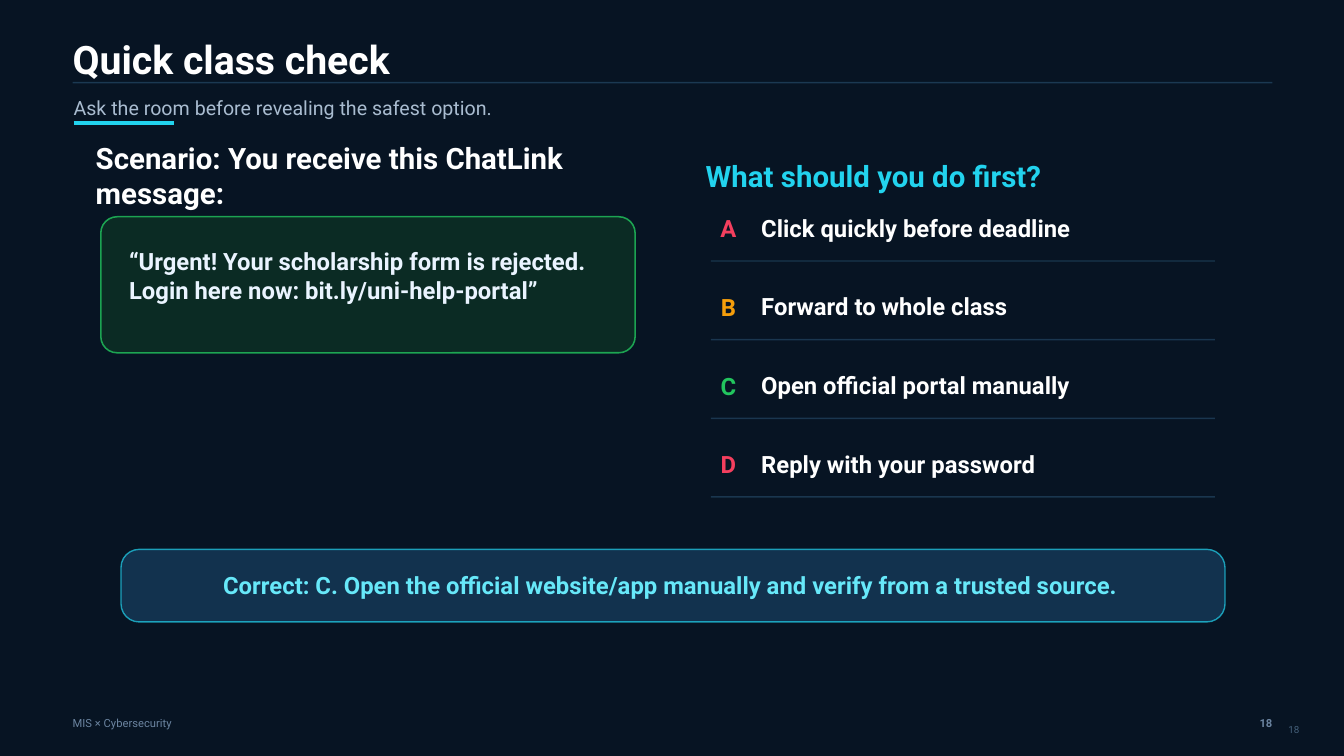
from dataclasses import dataclass

from pptx import Presentation
from pptx.dml.color import RGBColor
from pptx.enum.shapes import MSO_CONNECTOR, MSO_SHAPE
from pptx.enum.text import MSO_ANCHOR, PP_ALIGN
from pptx.oxml.ns import qn
from pptx.util import Inches, Pt
from lxml.etree import SubElement


@dataclass(frozen=True)
class Theme:
    font: str = "Roboto"
    background: str = "071423"
    white: str = "FFFFFF"
    pale: str = "EAF4FF"
    muted: str = "A9BCD0"
    footer: str = "6B84A0"
    dim: str = "45617B"
    rule: str = "244966"
    cyan: str = "22D3EE"
    light_cyan: str = "67E8F9"
    navy: str = "12324E"
    forest: str = "0B2B24"
    green: str = "22C55E"
    red: str = "F43F5E"
    amber: str = "F59E0B"
    title_size: int = 28
    heading_size: int = 21
    body_size: int = 17
    subtitle_size: int = 14
    footer_size: int = 8
    number_size: int = 7


THEME = Theme()
CELL = Inches(0.1)
COLUMNS, ROWS = 133.3, 75
MARGIN = 7.2
RIGHT_EDGE = 126.2
SCENARIO_LEFT = 9.5
QUESTION_LEFT = 70
HEADING_TOP = 16
OPTIONS_LEFT, OPTIONS_TOP = 70.5, 21.5
OPTION_STEP = 7.8
FOOTER_TOP = 70.8
OPTIONS = [
    ("A", "Click quickly before deadline", THEME.red),
    ("B", "Forward to whole class", THEME.amber),
    ("C", "Open official portal manually", THEME.green),
    ("D", "Reply with your password", THEME.red),
]


def grid(*cells):
    return [round(cell * CELL) for cell in cells]


def style_line(line, color, width, opacity):
    line.color.rgb = RGBColor.from_string(color)
    line.width = Pt(width)
    if opacity < 100:
        tint = line._get_or_add_ln().find(qn("a:solidFill"))[0]
        SubElement(tint, qn("a:alpha")).set("val", str(opacity * 1000))


def add_text(page, text, place, size, color, bold=False,
             align=PP_ALIGN.LEFT, anchor=MSO_ANCHOR.MIDDLE, inset=(0, 0)):
    frame = page.shapes.add_textbox(*grid(*place)).text_frame
    frame.word_wrap = True
    frame.vertical_anchor = anchor
    frame.margin_left = frame.margin_right = grid(inset[0])[0]
    frame.margin_top = frame.margin_bottom = grid(inset[1])[0]
    frame.text = text
    for para in frame.paragraphs:
        para.alignment = align
        for span in para.runs:
            span.font.name = THEME.font
            span.font.size = Pt(size)
            span.font.bold = bold
            span.font.color.rgb = RGBColor.from_string(color)


def add_rule(page, left, top, length, color, width=1, opacity=100):
    rule = page.shapes.add_connector(
        MSO_CONNECTOR.STRAIGHT, *grid(left, top, left + length, top))
    style_line(rule.line, color, width, opacity)
    SubElement(rule._element.spPr, qn("a:effectLst"))


def add_panel(page, place, rounding, fill, outline, width, opacity):
    panel = page.shapes.add_shape(MSO_SHAPE.ROUNDED_RECTANGLE, *grid(*place))
    panel.adjustments[0] = rounding
    panel.shadow.inherit = False
    panel.fill.solid()
    panel.fill.fore_color.rgb = RGBColor.from_string(fill)
    style_line(panel.line, outline, width, opacity)


def add_heading(page, text, left, width, color):
    add_text(page, text, (left, HEADING_TOP, width, 2.8),
             THEME.heading_size, color, True)


def add_option(page, index, letter, answer, color):
    top = OPTIONS_TOP + index * OPTION_STEP
    add_text(page, letter, (OPTIONS_LEFT, top, 3.5, 2.3),
             THEME.body_size, color, True, PP_ALIGN.CENTER)
    add_text(page, answer, (OPTIONS_LEFT + 5, top, 48, 2.2),
             THEME.body_size, THEME.white, True)
    add_rule(page, OPTIONS_LEFT, top + 4.4, 50, THEME.rule, opacity=65)


def add_header(page):
    add_rule(page, MARGIN, 8.2, RIGHT_EDGE - MARGIN, THEME.rule, opacity=70)
    add_text(page, "Quick class check", (MARGIN, 3.5, 112, 4.6),
             THEME.title_size, THEME.white, True)
    add_text(page, "Ask the room before revealing the safest option.",
             (7.3, 9.3, 114, 2.8), THEME.subtitle_size, THEME.muted)
    add_rule(page, 7.3, 12.2, 10, THEME.cyan, width=3)


def add_scenario(page):
    add_heading(page, "Scenario: You receive this ChatLink message:",
                SCENARIO_LEFT, 56, THEME.white)
    add_panel(page, (10, 21.5, 53, 13.5), 0.12,
              THEME.forest, THEME.green, 1.1, 80)
    add_text(page, "“Urgent! Your scholarship form is rejected.\n"
             "Login here now: bit.ly/uni-help-portal”",
             (12.8, 25.2, 47.5, 4.2), THEME.body_size, THEME.pale, True)


def add_question(page):
    add_heading(page, "What should you do first?", QUESTION_LEFT, 46, THEME.cyan)
    for index, option in enumerate(OPTIONS):
        add_option(page, index, *option)


def add_answer(page):
    add_panel(page, (12, 54.5, 109.5, 7.2), 0.25,
              THEME.navy, THEME.cyan, 1, 70)
    add_text(page, "Correct: C. Open the official website/app manually "
             "and verify from a trusted source.", (14.5, 57, 104, 2),
             THEME.body_size, THEME.light_cyan, True, PP_ALIGN.CENTER)


def add_footer(page):
    add_text(page, "MIS × Cybersecurity", (MARGIN, FOOTER_TOP, 24, 1.8),
             THEME.footer_size, THEME.footer)
    add_text(page, "18", (RIGHT_EDGE - 4, FOOTER_TOP, 4, 1.8),
             THEME.footer_size, THEME.footer, True, PP_ALIGN.RIGHT)
    add_text(page, "18", (126.8, 71.3, 6.5, 3.3), THEME.number_size,
             THEME.dim, anchor=MSO_ANCHOR.TOP, inset=(1, 0.5))


def main():
    deck = Presentation()
    deck.slide_width, deck.slide_height = grid(COLUMNS, ROWS)
    page = deck.slides.add_slide(deck.slide_layouts[6])
    page.background.fill.solid()
    page.background.fill.fore_color.rgb = RGBColor.from_string(THEME.background)
    add_header(page)
    add_scenario(page)
    add_question(page)
    add_answer(page)
    add_footer(page)
    deck.save("out.pptx")


if __name__ == "__main__":
    main()
